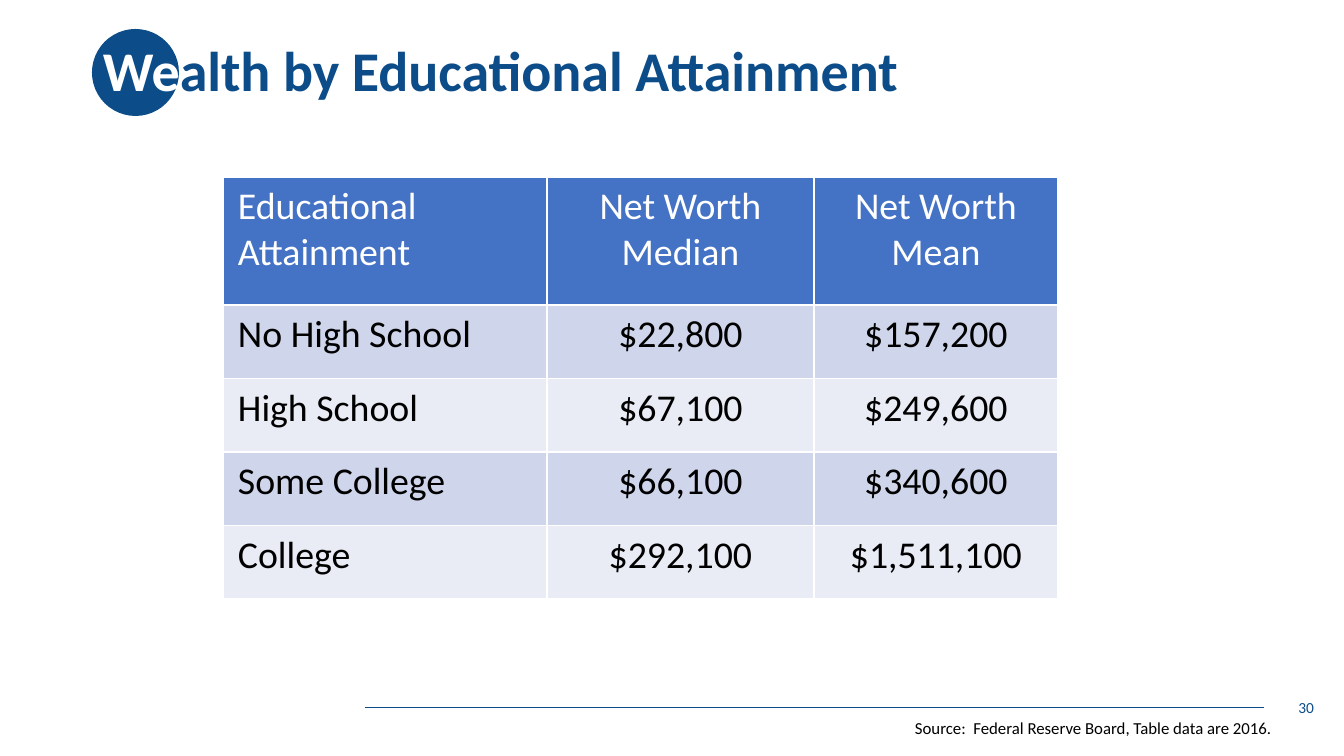
import pptx
import pptx.util
import pptx.dml.color
import pptx.enum.shapes
import pptx.enum.text
import pptx.oxml
import pptx.oxml.ns

RGB = pptx.dml.color.RGBColor
ALIGN = pptx.enum.text.PP_ALIGN
ANCHOR = pptx.enum.text.MSO_ANCHOR
NAVY = RGB(0x0C, 0x4C, 0x88)
WHITE = RGB(0xFF, 0xFF, 0xFF)
BLACK = RGB(0, 0, 0)
HEADER_BLUE = RGB(0x44, 0x72, 0xC4)
BANDS = [RGB(0xCF, 0xD5, 0xEA), RGB(0xE9, 0xEB, 0xF5)]

# Content
TITLE = [("We", WHITE), ("alth by Educational Attainment", NAVY)]
PAGE_NUMBER = [("30", NAVY)]
SOURCE = [("Source:  Federal Reserve Board, Table data are 2016.", BLACK)]
ROWS = [
    ("Educational\nAttainment", "Net Worth\nMedian", "Net Worth\nMean"),
    ("No High School", "$22,800", "$157,200"),
    ("High School", "$67,100", "$249,600"),
    ("Some College", "$66,100", "$340,600"),
    ("College", "$292,100", "$1,511,100"),
]

# Layout in px
PAGE_WIDTH, PAGE_HEIGHT = 1344, 756
TABLE_LEFT, TABLE_TOP, TABLE_HEIGHT = 223, 177, 422
COLUMN_WIDTHS = [324, 267, 244]
HEADER_HEIGHT = 128
CELL_INSETS = {"margin_left": 15, "margin_right": 15, "margin_top": 7, "margin_bottom": 7}


def px(length):
    return pptx.util.Emu(round(length * 914400 / 100.8))


def apply(target, values):
    for name, value in values.items():
        setattr(target, name, value)


def add_span(para, text, size, color, bold=False):
    span = para.add_run()
    span.text = text
    apply(span.font, {"name": "Calibri", "size": pptx.util.Pt(size), "bold": bold})
    span.font.color.rgb = color


def add_text(page, place, spans, size, frame_format, para_format, bold=False):
    box = page.shapes.add_textbox(*map(px, place))
    apply(box.text_frame, frame_format)
    para = box.text_frame.paragraphs[0]
    apply(para, para_format)
    for text, color in spans:
        add_span(para, text, size, color, bold)


def add_borders(cell):
    properties = cell._tc.get_or_add_tcPr()
    for side in "LRTB":
        properties.append(pptx.oxml.parse_xml(
            f'<a:ln{side} {pptx.oxml.ns.nsdecls("a")} w="12700"><a:solidFill>'
            f'<a:srgbClr val="{WHITE}"/></a:solidFill></a:ln{side}>'))


def add_wealth_table(page):
    body_height = (TABLE_HEIGHT - HEADER_HEIGHT) / (len(ROWS) - 1)
    table = page.shapes.add_table(
        len(ROWS), len(COLUMN_WIDTHS), px(TABLE_LEFT), px(TABLE_TOP),
        px(sum(COLUMN_WIDTHS)), px(TABLE_HEIGHT)).table
    for column, width in zip(table.columns, COLUMN_WIDTHS):
        column.width = px(width)
    for row_index, texts in enumerate(ROWS):
        is_header = row_index == 0
        table.rows[row_index].height = px(HEADER_HEIGHT if is_header else body_height)
        for column_index, text in enumerate(texts):
            cell = table.cell(row_index, column_index)
            apply(cell, {name: px(inset) for name, inset in CELL_INSETS.items()})
            add_borders(cell)
            cell.fill.solid()
            cell.fill.fore_color.rgb = HEADER_BLUE if is_header else BANDS[(row_index - 1) % 2]
            for line_index, line in enumerate(text.split("\n")):
                frame = cell.text_frame
                para = frame.add_paragraph() if line_index else frame.paragraphs[0]
                para.alignment = ALIGN.CENTER if column_index else ALIGN.LEFT
                add_span(para, line, 27, WHITE if is_header else BLACK)


def main():
    deck = pptx.Presentation()
    apply(deck, {"slide_width": px(PAGE_WIDTH), "slide_height": px(PAGE_HEIGHT)})
    page = deck.slides.add_slide(deck.slide_layouts[6])

    # Footer rule
    rule = page.shapes.add_connector(
        pptx.enum.shapes.MSO_CONNECTOR.STRAIGHT, px(365), px(707), px(1264), px(707))
    rule.line.color.rgb = NAVY
    rule.line.width = pptx.util.Pt(0.5)
    rule._element.spPr.append(pptx.oxml.parse_xml(
        f'<a:effectLst {pptx.oxml.ns.nsdecls("a")}/>'))

    # Title on its disc
    disc = page.shapes.add_shape(
        pptx.enum.shapes.MSO_SHAPE.OVAL, px(92), px(29), px(87), px(87))
    disc.shadow.inherit = False
    disc.fill.solid()
    disc.fill.fore_color.rgb = NAVY
    disc.line.fill.background()
    middle = {"word_wrap": True, "vertical_anchor": ANCHOR.MIDDLE}
    add_text(page, (93, 0, 1159, 146), TITLE, 40, middle, {"line_spacing": 0.9}, bold=True)

    # Table
    add_wealth_table(page)

    # Page number and source
    add_text(page, (1022, 687, 302, 40), PAGE_NUMBER, 11, middle, {"alignment": ALIGN.RIGHT})
    add_text(page, (905, 713, 381, 30), SOURCE, 12, {"word_wrap": False}, {})

    deck.save("out.pptx")


if __name__ == "__main__":
    main()
